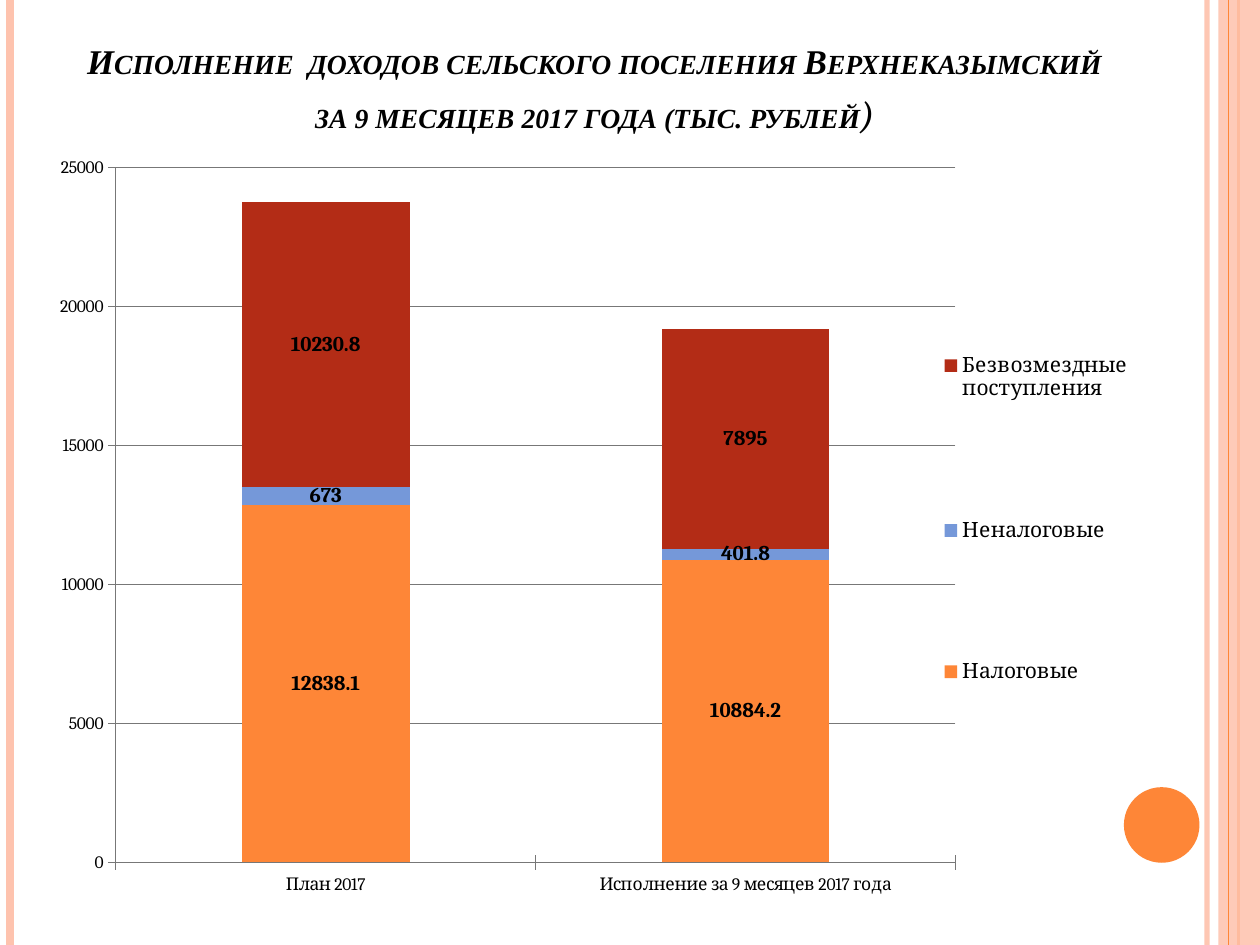
from lxml import etree
from pptx import Presentation, util as u
from pptx.chart.data import CategoryChartData
from pptx.dml.color import RGBColor
from pptx.enum import chart as charts, shapes, text
from pptx.oxml.ns import qn

WIDTH, HEIGHT = u.Inches(10), u.Inches(7.5)
BLACK, GREY, ORANGE, PEACH = "000000", "777777", "FE8637", "FEC3AE"

# Position as a share of the slide width, thickness in points, colour, opacity in percent
STRIPES = [
    (0.958, 3, PEACH, 93),
    (0.008, 4.5, PEACH, 100),
    (0.983, 1.5, ORANGE, 100),
]
CATEGORIES = ["План 2017", "Исполнение за 9 месяцев 2017 года"]
INCOME = [
    ("Налоговые", (12838.1, 10884.2), ORANGE),
    ("Неналоговые", (673, 401.8), "7598D9"),
    ("Безвозмездные поступления", (10230.8, 7895), "B32C16"),
]


def colour(value):
    return RGBColor.from_string(value)


def share(left, top, width, height):
    """Turn shares of the slide's size into lengths."""
    return (int(left * WIDTH), int(top * HEIGHT),
            int(width * WIDTH), int(height * HEIGHT))


def set_opacity(fill_parent, percent):
    tint = next(fill_parent.iter(qn("a:srgbClr")))
    etree.SubElement(tint, qn("a:alpha")).set("val", str(percent * 1000))


def add_stripe(page, position, points, tone, opacity):
    x = int(position * WIDTH)
    line = page.shapes.add_connector(shapes.MSO_CONNECTOR.STRAIGHT, x, 0, x, HEIGHT)
    line.line.color.rgb = colour(tone)
    line.line.width = u.Pt(points)
    properties = line._element.spPr
    if opacity < 100:
        set_opacity(properties, opacity)
    etree.SubElement(properties, qn("a:effectLst"))


def add_plain_shape(page, kind, area, tone, opacity=100):
    shape = page.shapes.add_shape(kind, *share(*area))
    shape.shadow.inherit = False
    shape.fill.solid()
    shape.fill.fore_color.rgb = colour(tone)
    shape.line.fill.background()
    if opacity < 100:
        set_opacity(shape._element.spPr, opacity)


def add_span(para, words, size, font, bold, small_caps=False):
    span = para.add_run()
    span.text = words
    span.font.size, span.font.name = u.Pt(size), font
    span.font.bold, span.font.italic = bold, True
    span.font.color.rgb = colour(BLACK)
    if small_caps:
        span.font._element.set("cap", "small")


def add_title(page):
    box = page.shapes.add_textbox(*share(0.05, 0.04, 0.922, 0.113))
    frame = box.text_frame
    frame.word_wrap = True
    frame.vertical_anchor = text.MSO_ANCHOR.BOTTOM
    first, second = frame.paragraphs[0], frame.add_paragraph()
    for para in (first, second):
        para.alignment = text.PP_ALIGN.CENTER
    first._p.get_or_add_pPr().set("marR", str(u.Inches(0.78)))
    add_span(first, "Исполнение  доходов сельского поселения Верхнеказымский",
             19.8, "Times New Roman", True, True)
    add_span(second, "за 9 месяцев 2017 года (тыс. рублей",
             19.8, "Times New Roman", True, True)
    add_span(second, ")", 27, "Cambria", False, True)


def place(parent, x, y, width, height, inner=False):
    """Fix a chart part's place, in shares of the chart's size."""
    layout = parent.find(qn("c:layout"))
    if layout is None:
        layout = etree.Element(qn("c:layout"))
        before = parent.find(qn("c:legendPos"))
        parent.insert(0 if before is None else 1, layout)
    for child in list(layout):
        layout.remove(child)
    manual = etree.SubElement(layout, qn("c:manualLayout"))
    settings = [("layoutTarget", "inner")] if inner else []
    settings += [("xMode", "edge"), ("yMode", "edge"),
                 ("x", x), ("y", y), ("w", width), ("h", height)]
    for tag, value in settings:
        etree.SubElement(manual, qn(f"c:{tag}")).set("val", str(value))


def style_axis(axis):
    axis.major_tick_mark = charts.XL_TICK_MARK.CROSS
    axis.minor_tick_mark = charts.XL_TICK_MARK.NONE
    axis.format.line.color.rgb = colour(GREY)
    axis.format.line.width = u.Pt(0.75)


def style_series(series, tone):
    series.format.fill.solid()
    series.format.fill.fore_color.rgb = colour(tone)
    series.invert_if_negative = False
    labels = series.data_labels
    labels.show_value = True
    labels.position = charts.XL_LABEL_POSITION.CENTER
    labels.font.size, labels.font.bold = u.Pt(12), True
    labels.font.name = "Cambria"
    labels.font.color.rgb = colour(BLACK)


def add_income_chart(page):
    data = CategoryChartData()
    data.categories = CATEGORIES
    for name, values, _ in INCOME:
        data.add_series(name, values)
    chart = page.shapes.add_chart(
        charts.XL_CHART_TYPE.COLUMN_STACKED,
        *share(0.028, 0.153, 0.913, 0.808), data).chart
    chart.has_title = False
    chart.font.size, chart.font.name = u.Pt(10), "Cambria"
    chart.font.color.rgb = colour(BLACK)

    plot = chart.plots[0]
    plot.vary_by_categories = False
    plot.gap_width, plot.overlap = 150, 100
    for series, (_, _, tone) in zip(plot.series, INCOME):
        style_series(series, tone)

    style_axis(chart.category_axis)
    style_axis(chart.value_axis)
    chart.value_axis.minimum_scale = 0
    chart.value_axis.maximum_scale = 25000
    chart.value_axis.major_unit = 5000
    chart.value_axis.has_major_gridlines = True
    grid = chart.value_axis.major_gridlines.format.line
    grid.color.rgb, grid.width = colour(GREY), u.Pt(0.75)

    chart.has_legend = True
    legend = chart.legend
    legend.position = charts.XL_LEGEND_POSITION.RIGHT
    legend.include_in_layout = False
    legend.font.size, legend.font.name = u.Pt(12), "Cambria"
    legend.font.color.rgb = colour(BLACK)
    place(legend._element, 0.78, 0.12, 0.18, 0.74)
    place(plot._element.getparent(), 0.07, 0.03, 0.73, 0.91, inner=True)


def main():
    deck = Presentation()
    deck.slide_width, deck.slide_height = WIDTH, HEIGHT
    page = deck.slides.add_slide(deck.slide_layouts[6])
    for stripe in STRIPES:
        add_stripe(page, *stripe)
    add_plain_shape(page, shapes.MSO_SHAPE.RECTANGLE, (0.967, 0, 0.033, 1), PEACH, 87)
    add_stripe(page, 0.975, 0.75, ORANGE, 100)
    add_plain_shape(page, shapes.MSO_SHAPE.OVAL, (0.892, 0.833, 0.06, 0.08), ORANGE)
    add_title(page)
    add_income_chart(page)
    deck.save("out.pptx")


if __name__ == "__main__":
    main()
